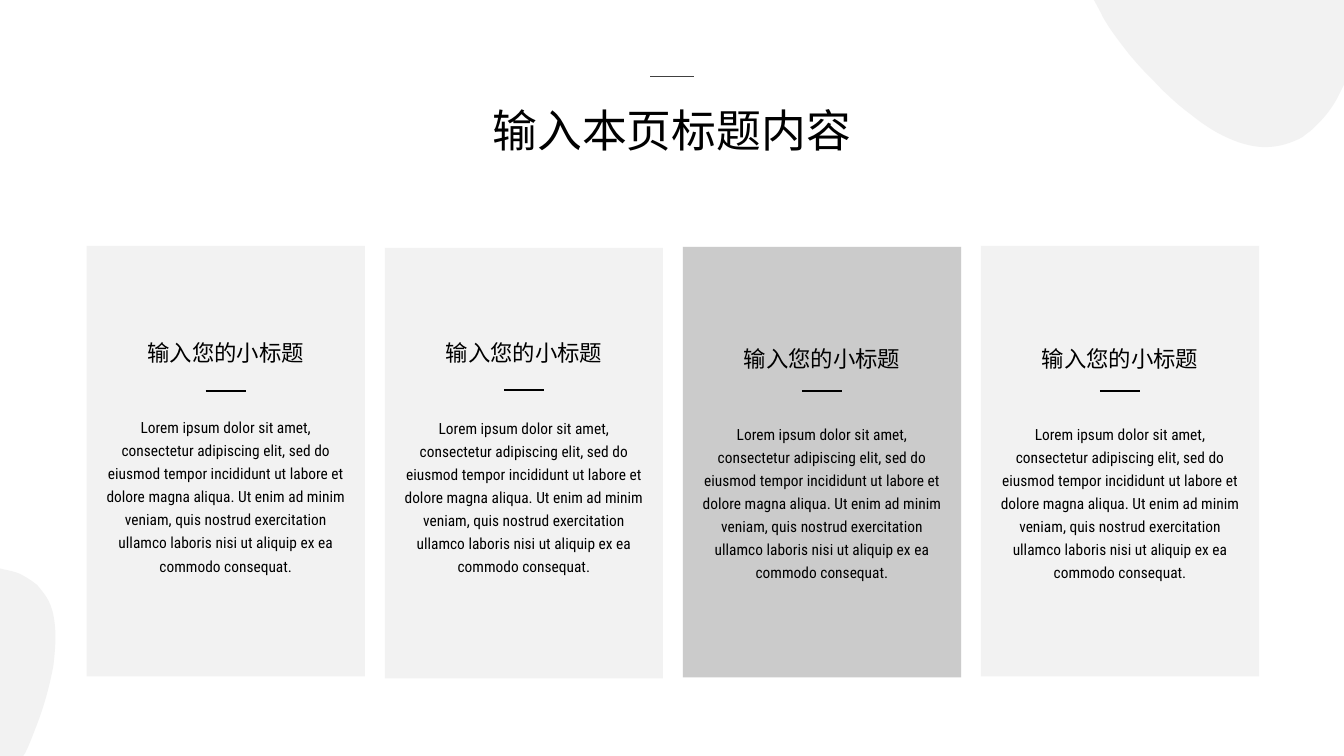
"""Build a title slide section with four text cards and two corner blobs."""
from pptx import Presentation
from pptx import util as u
from pptx.dml.color import RGBColor
from pptx.enum import shapes, text
from pptx.oxml.ns import qn
from lxml import etree

TITLE = "输入本页标题内容"
HEADING = "输入您的小标题"
BODY = ("Lorem ipsum dolor sit amet, consectetur adipiscing elit, sed do eiusmod "
        "tempor incididunt ut labore et dolore magna aliqua. Ut enim ad minim veniam, "
        "quis nostrud exercitation ullamco laboris nisi ut aliquip ex ea commodo consequat.")
FONT = "Roboto Condensed"
BLACK = RGBColor(0x00, 0x00, 0x00)
DARK = RGBColor(0x40, 0x40, 0x40)
PALE = RGBColor(0xF2, 0xF2, 0xF2)
GREY = RGBColor(0xBF, 0xBF, 0xBF)

CARDS = [
    {"top": 2.44, "text_top": 3.24, "rule": 3.88, "gap": 33.6, "fill": PALE, "opacity": 100},
    {"top": 2.46, "text_top": 3.24, "rule": 3.87, "gap": 34.2, "fill": PALE, "opacity": 100},
    {"top": 2.45, "text_top": 3.30, "rule": 3.88, "gap": 34.2, "fill": GREY, "opacity": 80},
    {"top": 2.44, "text_top": 3.30, "rule": 3.88, "gap": 34.2, "fill": PALE, "opacity": 100},
]
FIRST_LEFT, LAST_LEFT = 0.86, 9.73
CARD_WIDTH, CARD_HEIGHT = 2.76, 4.27
TEXT_WIDTH, TEXT_HEIGHT = 2.6, 2.73
RULE_WIDTH = 0.4

TOP_BLOB = [
    [(10.85, 0)], [(13.33, 0)], [(13.33, 0.84)], [(13.26, 0.98)],
    [(13.21, 1.07), (13.15, 1.15), (13.08, 1.22)],
    [(13.06, 1.24), (13.04, 1.26), (13.02, 1.28)],
    [(12.99, 1.31), (12.95, 1.33), (12.92, 1.36)],
    [(12.81, 1.42), (12.68, 1.46), (12.55, 1.46)],
    [(12.46, 1.46), (12.37, 1.44), (12.28, 1.41)],
    [(12.17, 1.37), (12.07, 1.32), (11.98, 1.26)],
    [(11.90, 1.21), (11.83, 1.15), (11.75, 1.09)],
    [(11.70, 1.05), (11.64, 1.00), (11.59, 0.95)],
    [(11.53, 0.90), (11.48, 0.84), (11.43, 0.79)],
    [(11.39, 0.75)],
    [(11.32, 0.68), (11.26, 0.61), (11.20, 0.54)],
    [(11.13, 0.45), (11.06, 0.36), (11.00, 0.27)],
    [(10.97, 0.22), (10.94, 0.18), (10.92, 0.13)],
]
BOTTOM_BLOB = [
    [(0, 5.64)], [(0.04, 5.65)],
    [(0.09, 5.66), (0.14, 5.67), (0.19, 5.69)],
    [(0.25, 5.72), (0.30, 5.75), (0.35, 5.79)],
    [(0.37, 5.80), (0.39, 5.83), (0.43, 5.88)],
    [(0.47, 5.93), (0.50, 5.99), (0.52, 6.06)],
    [(0.54, 6.14), (0.55, 6.23), (0.55, 6.32)],
    [(0.55, 6.41), (0.54, 6.51), (0.53, 6.60)],
    [(0.49, 6.82), (0.43, 7.03), (0.35, 7.23)],
    [(0.32, 7.31), (0.29, 7.39), (0.25, 7.47)],
    [(0.23, 7.5)], [(0, 7.5)],
]


def paint(shape, color, opacity=100):
    shape.shadow.inherit = False
    shape.fill.solid()
    shape.fill.fore_color.rgb = color
    shape.line.fill.background()
    if opacity < 100:
        tint = shape.fill._xPr.find(f".//{qn('a:srgbClr')}")
        etree.SubElement(tint, qn("a:alpha")).set("val", str(opacity * 1000))


def add_blob(slide, segments):
    anchors = [tuple(map(u.Inches, segment[-1])) for segment in segments]
    builder = slide.shapes.build_freeform(*anchors[0], scale=1.0)
    builder.add_line_segments(anchors[1:], close=True)
    blob = builder.convert_to_shape()
    paint(blob, PALE)
    edges = list(blob._element.spPr.iter(qn("a:lnTo")))
    for edge, segment in zip(edges, segments[1:]):
        if len(segment) == 1:
            continue
        edge.clear()
        curve = etree.SubElement(edge.getparent(), qn("a:cubicBezTo"))
        edge.getparent().replace(edge, curve)
        for x, y in segment:
            point = etree.SubElement(curve, qn("a:pt"))
            point.set("x", str(u.Inches(x) - blob.left))
            point.set("y", str(u.Inches(y) - blob.top))


def add_rule(slide, left, top, width, color, weight):
    rule = slide.shapes.add_connector(
        shapes.MSO_CONNECTOR.STRAIGHT, u.Inches(left), u.Inches(top),
        u.Inches(left + width), u.Inches(top))
    rule.line.color.rgb = color
    rule.line.width = u.Pt(weight)
    etree.SubElement(rule._element.spPr, qn("a:effectLst"))


def add_text(slide, left, top, width, height, lines, anchor):
    box = slide.shapes.add_textbox(*map(u.Inches, (left, top, width, height)))
    frame = box.text_frame
    frame.word_wrap = True
    frame.vertical_anchor = anchor
    frame.text = "\n".join(line[0] for line in lines)
    for para, (_, size, spacing, before) in zip(frame.paragraphs, lines):
        para.alignment = text.PP_ALIGN.CENTER
        para.line_spacing = spacing
        para.space_before = u.Pt(before)
        for span in para.runs:
            span.font.name = FONT
            span.font.size = u.Pt(size)
            span.font.color.rgb = BLACK


def add_card(slide, left, card):
    panel = slide.shapes.add_shape(
        shapes.MSO_SHAPE.RECTANGLE,
        *map(u.Inches, (left, card["top"], CARD_WIDTH, CARD_HEIGHT)))
    paint(panel, card["fill"], card["opacity"])
    add_text(slide, left + (CARD_WIDTH - TEXT_WIDTH) / 2, card["text_top"],
             TEXT_WIDTH, TEXT_HEIGHT,
             [(HEADING, 16, 1.3, 0), (BODY, 11, 1.25, card["gap"])],
             text.MSO_ANCHOR.TOP)
    add_rule(slide, left + (CARD_WIDTH - RULE_WIDTH) / 2, card["rule"], RULE_WIDTH, BLACK, 1)


def main():
    deck = Presentation()
    deck.slide_width, deck.slide_height = u.Inches(13.33), u.Inches(7.5)
    page = deck.slides.add_slide(deck.slide_layouts[6])
    step = (LAST_LEFT - FIRST_LEFT) / (len(CARDS) - 1)
    for index, card in enumerate(CARDS):
        add_card(page, FIRST_LEFT + index * step, card)
    add_text(page, 4.31, 0.98, 4.71, 0.67, [(TITLE, 32, 0.9, 10)], text.MSO_ANCHOR.MIDDLE)
    add_rule(page, 6.45, 0.76, 0.43, DARK, 0.5)
    for segments in (TOP_BLOB, BOTTOM_BLOB):
        add_blob(page, segments)
    deck.save("out.pptx")


if __name__ == "__main__":
    main()
